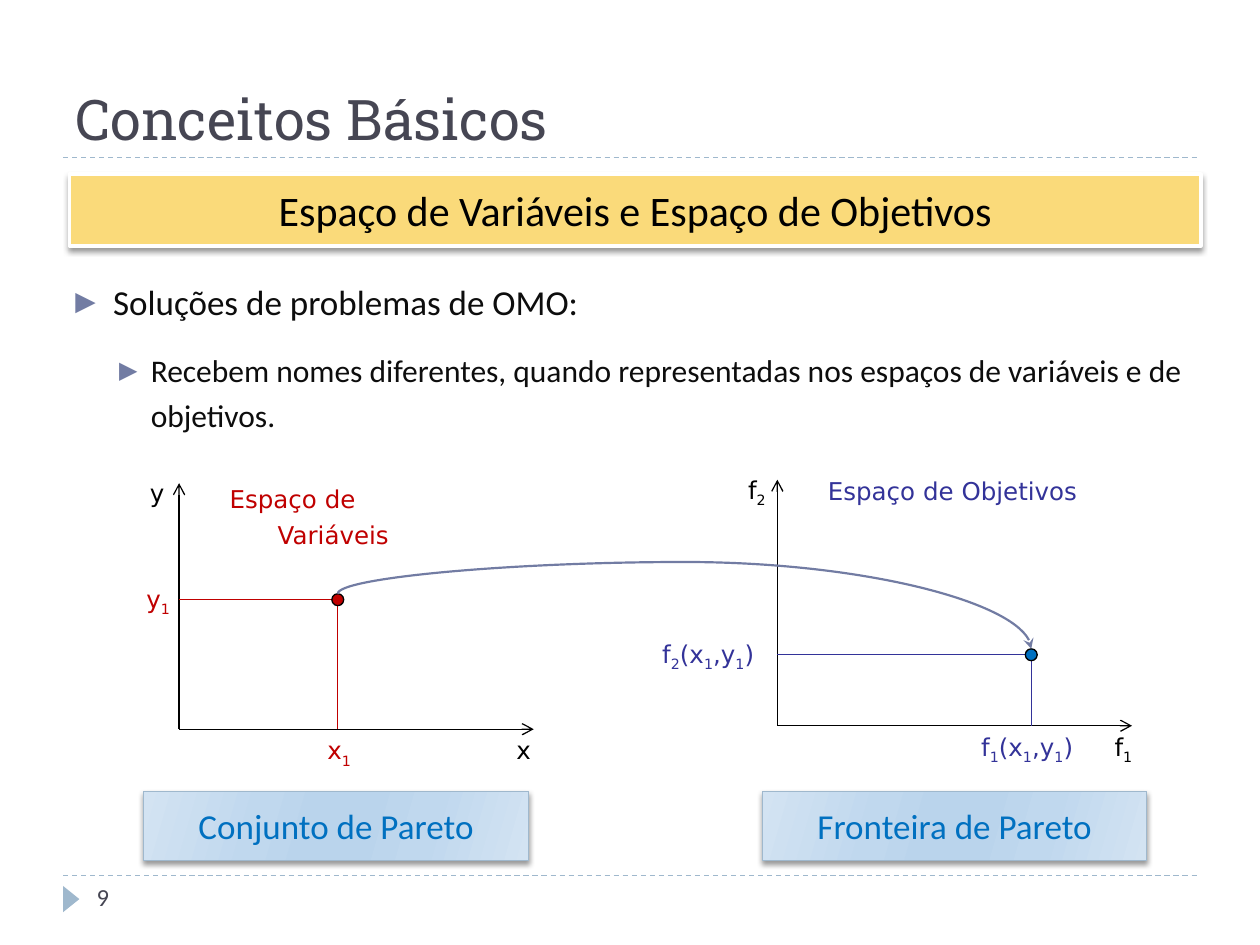
from dataclasses import dataclass

from lxml import etree
from pptx import Presentation
from pptx.dml.color import RGBColor
from pptx.enum.dml import MSO_LINE
from pptx.enum.shapes import MSO_CONNECTOR, MSO_SHAPE
from pptx.enum.text import MSO_ANCHOR, PP_ALIGN
from pptx.oxml.ns import qn
from pptx.util import Cm, Pt

STRAIGHT, CURVE = MSO_CONNECTOR.STRAIGHT, MSO_CONNECTOR.CURVE
RECT, OVAL = MSO_SHAPE.RECTANGLE, MSO_SHAPE.OVAL
TRIANGLE = MSO_SHAPE.ISOSCELES_TRIANGLE
TOP, MIDDLE, BOTTOM = MSO_ANCHOR.TOP, MSO_ANCHOR.MIDDLE, MSO_ANCHOR.BOTTOM
LEFT, CENTER = PP_ALIGN.LEFT, PP_ALIGN.CENTER
DASH = MSO_LINE.DASH


@dataclass(frozen=True)
class Theme:
    head: str = "Roboto Slab"
    body: str = "Calibri"
    math: str = "DejaVu Sans"
    ink: str = "464653"
    text: str = "0D0D0D"
    black: str = "000000"
    white: str = "FFFFFF"
    rule: str = "9FB8CD"
    accent: str = "727CA3"
    gold: str = "FADA7A"
    red: str = "C00000"
    navy: str = "333399"
    blue: str = "0070C0"
    fade: tuple = ((0, "D3E3F2"), (30, "C0D8EE"), (45, "BAD4EC"),
                   (55, "BAD4EC"), (73, "C0D8EE"), (100, "D3E3F2"))
    title: int = 32
    banner: int = 24
    large: int = 20
    medium: int = 18
    small: int = 14


T = Theme()


def rgb(color):
    return RGBColor.from_string(color)


def node(parent, tag, **attrs):
    return etree.SubElement(parent, qn(tag), {k: str(v) for k, v in attrs.items()})


def write(par, text, size, font, color):
    """Add runs; the sign after each underscore is a subscript."""
    first, *rest = text.split("_")
    parts = [(first, False)]
    for part in rest:
        parts += [(part[0], True), (part[1:], False)]
    for part, low in parts:
        if part:
            run = par.add_run()
            run.text = part
            run.font.size, run.font.name = Pt(size), font
            run.font.color.rgb = rgb(color)
            if low:
                run._r.get_or_add_rPr().set("baseline", "-25000")


def frame(slide, box, anchor=TOP):
    area = slide.shapes.add_textbox(*map(Cm, box)).text_frame
    area.word_wrap, area.vertical_anchor = True, anchor
    return area


def label(slide, box, text, color, size=T.small, font=T.math, anchor=TOP):
    par = frame(slide, box, anchor).paragraphs[0]
    write(par, text, size, font, color)
    return par


def indent(par, left, hang):
    props = par._p.get_or_add_pPr()
    props.set("marL", str(Cm(left)))
    props.set("indent", str(-Cm(hang)))
    par.line_spacing = 1.2
    return props


def line(slide, start, end, color, width=0.75, head=None, kind=STRAIGHT):
    item = slide.shapes.add_connector(kind, *map(Cm, (*start, *end)))
    item.line.color.rgb, item.line.width = rgb(color), Pt(width)
    if head:
        node(item.line._get_or_add_ln(), "a:tailEnd", type=head)
    node(item._element.spPr, "a:effectLst")
    return item


def shape(slide, kind, box, fill=None, edge=None, width=0.75):
    item = slide.shapes.add_shape(kind, *map(Cm, box))
    item.shadow.inherit = False
    if fill:
        item.fill.solid()
        item.fill.fore_color.rgb = rgb(fill)
    if edge:
        item.line.color.rgb, item.line.width = rgb(edge), Pt(width)
    else:
        item.line.fill.background()
    return item


def panel(slide, box, text, size, color, fill=None, edge=T.rule, width=0.75):
    """Shadowed box with centred text; blue fade unless a fill is given."""
    item = shape(slide, RECT, box, fill, edge, width)
    if not fill:
        item.fill.gradient()
        item.fill.gradient_angle = 344
        stops = item._element.spPr.find(".//" + qn("a:gsLst"))
        stops.clear()
        for pos, tone in T.fade:
            node(node(stops, "a:gs", pos=pos * 1000), "a:srgbClr", val=tone)
    glow = node(item._element.spPr.find(qn("a:effectLst")), "a:outerShdw",
                blurRad=Pt(3), dist=Pt(2), dir=5400000, rotWithShape=0)
    node(node(glow, "a:srgbClr", val=T.black), "a:alpha", val=40000)
    area = item.text_frame
    area.vertical_anchor = MIDDLE
    area.paragraphs[0].alignment = CENTER
    write(area.paragraphs[0], text, size, T.body, color)


def bullets(slide, box, items):
    area = frame(slide, box)
    for i, (text, size, left, hang) in enumerate(items):
        par = area.add_paragraph() if i else area.paragraphs[0]
        par.level = i
        props = indent(par, left, hang)
        par.space_after = Pt(6)
        if i:
            par.space_before = Pt(6)
        node(node(props, "a:buClr"), "a:srgbClr", val=T.accent)
        node(props, "a:buSzPct", val=76000)
        node(props, "a:buFont", typeface=T.math)
        node(props, "a:buChar", char="▶")
        write(par, text, size, T.body, T.text)


def plot(slide, box, name, axes, point, marks, color, dot):
    """Axes with one marked point; returns the top of its dot."""
    left, top, wide, high = box
    base = top + high
    px, py = left + point[0], base - point[1]
    # Axes and their names
    line(slide, (left, base), (left, top), T.black, head="arrow")
    line(slide, (left, base), (left + wide, base), T.black, head="arrow")
    label(slide, (left + 6.55, base, 0.99, 0.86), axes[0], T.black)
    label(slide, (left - 0.84, top - 0.22, 0.99, 0.86), axes[1], T.black)
    # Caption
    text, drop, span = name
    indent(label(slide, (left + 0.77, top + drop, span, 0.9), text, color), 0.97, 0.97)
    # Guides, their labels and the point
    line(slide, (px, py), (px, base), color)
    line(slide, (px, py), (left, py), color)
    (xtext, xat), (ytext, yat), span = marks
    label(slide, (left + xat, base, span, 0.86), xtext, color)
    label(slide, (left + yat, py - 0.44, span, 0.86), ytext, color)
    shape(slide, OVAL, (px - 0.12, py - 0.12, 0.24, 0.24), dot, T.black)
    return px, py - 0.12


def link(slide, start, end, lift):
    """Curve that rises above its start and falls to its end."""
    wide, high = end[1] - start[1], end[0] - start[0]
    cx, cy = (start[0] + end[0]) / 2, (start[1] + end[1]) / 2
    item = line(slide, (cx + wide / 2, cy - high / 2), (cx - wide / 2, cy + high / 2),
                T.accent, 1.25, "stealth", CURVE)
    props = item._element.spPr
    props.find(qn("a:xfrm")).set("rot", "16200000")
    node(props.find(".//" + qn("a:avLst")), "a:gd", name="adj1",
         fmla=f"val {round(-lift / wide * 100000)}")


def main():
    deck = Presentation()
    deck.slide_width, deck.slide_height = Cm(25.4), Cm(19.05)
    slide = deck.slides.add_slide(deck.slide_layouts[6])

    # Rules and page mark
    for y in (17.65, 3.18):
        line(slide, (1.27, y), (24.13, y), T.rule).line.dash_style = DASH
    shape(slide, TRIANGLE, (1.17, 17.96, 0.53, 0.33), T.rule).rotation = 90
    label(slide, (1.7, 17.65, 5.51, 1.02), "9", T.ink, font=T.body)

    # Title, banner and body
    label(slide, (1.27, 0.43, 22.86, 2.75), "Conceitos Básicos", T.ink,
          T.title, T.head, BOTTOM)
    panel(slide, (1.4, 3.51, 22.81, 1.45), "Espaço de Variáveis e Espaço de Objetivos",
          T.banner, T.black, T.gold, T.white, 2)
    bullets(slide, (1.27, 5.36, 22.86, 3.38), (
        ("Soluções de problemas de OMO:", T.large, 0.76, 0.76),
        ("Recebem nomes diferentes, quando representadas nos espaços de "
         "variáveis e de objetivos.", T.medium, 1.52, 0.64)))

    # The two spaces and the mapping between them
    start = plot(slide, (3.61, 9.74, 7.15, 4.96), ("Espaço de Variáveis", -0.22, 5.41),
                 ("x", "y"), (3.2, 2.61), (("x_1", 2.74), ("y_1", -0.91), 1.19),
                 T.red, T.red)
    end = plot(slide, (15.67, 9.67, 7.15, 4.96), ("Espaço de Objetivos", -0.32, 5.61),
               ("f_1", "f_2"), (5.12, 1.43),
               (("f_1(x_1,y_1)", 3.86), ("f_2(x_1,y_1)", -2.57), 2.59), T.navy, T.blue)
    link(slide, start, end, 0.64)

    # Names of the solution sets
    for x, text in ((2.9, "Conjunto de Pareto"), (15.37, "Fronteira de Pareto")):
        panel(slide, (x, 15.95, 7.75, 1.4), text, T.large, T.blue)

    deck.save("out.pptx")


if __name__ == "__main__":
    main()
